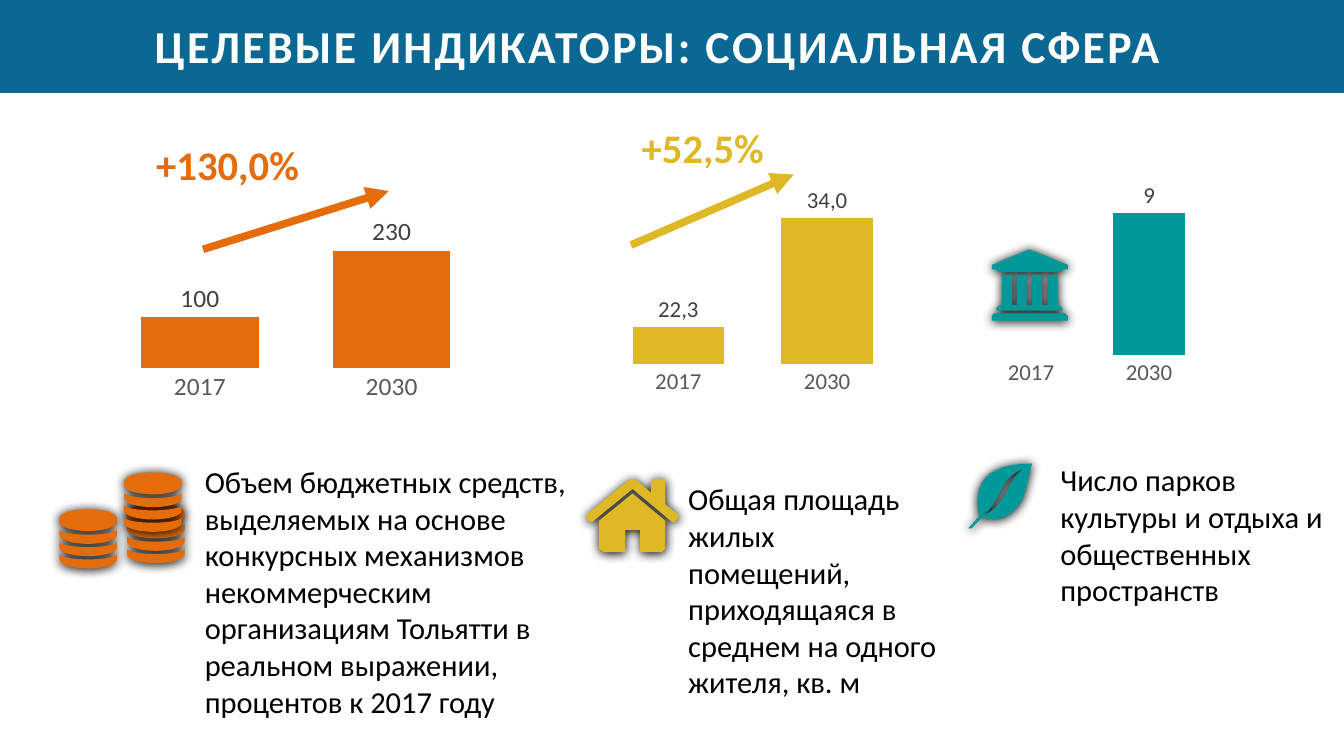
from dataclasses import dataclass
from math import cos, pi, sin

from lxml.etree import SubElement
from pptx import Presentation
from pptx.chart.data import CategoryChartData
from pptx.dml.color import RGBColor
from pptx.enum.chart import XL_CHART_TYPE as ChartType, XL_LABEL_POSITION as LabelPosition
from pptx.enum.chart import XL_TICK_MARK as TickMark
from pptx.enum.shapes import MSO_CONNECTOR as Connector, MSO_SHAPE as Shape
from pptx.enum.text import MSO_ANCHOR as Anchor, MSO_AUTO_SIZE as AutoSize, PP_ALIGN as Align
from pptx.oxml.ns import qn
from pptx.util import Cm, Pt

FONT = "Calibri"
WIDTH, HEIGHT = 37.34, 21.01
PANEL_TOP = 3.3
GRID = Cm(2.54) / 100  # one unit of the icon outlines
FINE = 10  # subdivisions of a unit, for smooth curves


@dataclass
class Indicator:
    """One panel; every box and point is in cm from the panel's corner."""
    left: float
    color: str
    chart_box: tuple
    plot: tuple
    values: tuple
    top_value: float
    label_size: int
    caption: str
    caption_box: tuple
    icons: tuple
    point_labels: tuple = ()
    growth: str = ""
    growth_box: tuple = ()
    arrow: tuple = ()


def rgb(color):
    return RGBColor.from_string(color)


def style_font(font, size, color, bold=False):
    font.name, font.size, font.bold = FONT, Pt(size), bold
    font.color.rgb = rgb(color)


def arc(bottom, depth, start, end):
    """Points of an elliptic arc across a coin; angles are in radians."""
    steps = [start + (end - start) * i / 16 for i in range(17)]
    return [(31.5 + 31.5 * cos(a), bottom + depth * sin(a)) for a in steps]


def curve(*controls):
    """Points of a cubic Bezier curve."""
    points = []
    for i in range(17):
        t = i / 16
        weights = ((1 - t) ** 3, 3 * t * (1 - t) ** 2, 3 * t * t * (1 - t), t ** 3)
        points.append(tuple(sum(w * c[k] for w, c in zip(weights, controls)) for k in (0, 1)))
    return points


def chain(start, *segments):
    """Points of joined Bezier curves."""
    points = [start]
    for segment in segments:
        points += curve(points[-1], *segment)[1:]
    return points


COINS = [arc(10, 10, pi, 2 * pi) + arc(14, 10, 0, pi)] + [
    arc(22 + 13.5 * i, 6, pi, 0) + arc(28 + 13.5 * i, 10, 0, pi) for i in range(3)]
HOUSE = [
    [(97, 47), (94, 47), (51, 11), (7, 47), (4, 47), (0, 42), (1, 39), (46, 2), (51, 0),
     (56, 2), (71, 15), (71, 2), (73, 0), (85, 0), (87, 2), (87, 28), (101, 39), (101, 42)],
    [(87, 76), (83, 80), (59, 80), (59, 56), (43, 56), (43, 80), (19, 80), (14, 76),
     (14, 46), (51, 16), (87, 46)]]
TEMPLE = [
    [(83, 17), (83, 22), (77, 22), (74, 25), (8, 25), (5, 22), (0, 22), (0, 17), (41, 0)],
    [(x, y) for column in (11, 27, 44, 61)
     for x, y in ((column, 61), (column, 28), (column + 11, 28), (column + 11, 61))]
    + [(74, 61), (77, 64), (77, 67), (5, 67), (5, 64), (8, 61)],
    [(83, 73), (83, 78), (0, 78), (0, 73), (2, 70), (80, 70)]]
LEAF = [
    chain((75, 0), [(0, 0), (17, 50), (17, 58)]) + [(5, 71), (9, 71)]
    + chain((20, 59), [(26, 60), (39, 65), (53, 53)], [(68, 42), (67, 29), (75, 0)]),
    chain((63, 7), [(70, 3), (63, 8), (63, 8)], [(56, 13), (53, 20), (49, 27)],
          [(44, 37), (37, 49), (27, 54)], [(16, 58), (21, 56), (26, 53)],
          [(30, 49), (36, 39), (40, 32)], [(45, 22), (49, 13), (63, 7)])]

INDICATORS = [
    Indicator(
        1.65, "E46C0A", (1.02, 2.72, 11.1, 5.18), (0.02, 0.11, 0.96, 0.7), (100, 230), 250, 20,
        "Объем бюджетных средств, выделяемых на основе конкурсных механизмов некоммерческим "
        "организациям Тольятти в реальном выражении, процентов к 2017 году",
        (3.79, 9.45, 10.67, 7.44),
        ((COINS, 0, 10.85), (COINS, 1.88, 10.7), (COINS, 1.8, 9.83)),
        growth="+130,0%", growth_box=(2.44, 0.46, 5.23, 1.63), arrow=(3.99, 3.63, 9.15, 2.01)),
    Indicator(
        16.28, "DEB825", (0.33, 1.88, 8.61, 5.89), (0.02, 0.06, 0.96, 0.78), (101.7, 400), 450, 18,
        "Общая площадь жилых помещений, приходящаяся в среднем на одного жителя, кв. м",
        (2.59, 9.93, 7.47, 6.4), ((HOUSE, 0, 10.01),), point_labels=("22,3", "34,0"),
        growth="+52,5%", growth_box=(1.3, 0, 5.18, 1.63), arrow=(1.25, 3.51, 5.77, 1.55)),
    Indicator(
        26.77, "009999", (0.1, 1.75, 6.83, 5.74), (0.02, 0.07, 0.96, 0.77), (None, 9), 10, 18,
        "Число парков культуры и отдыха и общественных пространств",
        (2.44, 9.4, 8.05, 4.37), ((TEMPLE, 0.79, 3.63), (LEAF, 0, 9.58))),
]


def add_header(slide, text):
    band = slide.shapes.add_shape(Shape.RECTANGLE, 0, 0, Cm(WIDTH), Cm(2.58))
    band.shadow.inherit = False
    band.fill.solid()
    band.fill.fore_color.rgb = rgb("0B6893")
    band.line.fill.background()
    slide.shapes._spTree.insert(2, band._element)  # behind the title
    title = slide.shapes.title
    title.left, title.top, title.width, title.height = Cm(2.44), Cm(0.56), Cm(31.67), Cm(1.42)
    frame = title.text_frame
    frame.margin_left = frame.margin_top = frame.margin_right = frame.margin_bottom = 0
    frame.vertical_anchor, frame.auto_size = Anchor.MIDDLE, AutoSize.NONE
    para = frame.paragraphs[0]
    para.alignment = Align.CENTER
    span = para.add_run()
    span.text = text
    style_font(span.font, 36, "FFFFFF", True)
    span.font._element.set("spc", "190")


def add_text(slide, box, text, size, color, bold=False):
    frame = slide.shapes.add_textbox(*box).text_frame
    frame.word_wrap, frame.auto_size = True, AutoSize.SHAPE_TO_FIT_TEXT
    span = frame.paragraphs[0].add_run()
    span.text = text
    style_font(span.font, size, color, bold)


def add_arrow(slide, ends, color):
    arrow = slide.shapes.add_connector(Connector.STRAIGHT, *ends)
    arrow.line.color.rgb, arrow.line.width = rgb(color), Pt(6)
    SubElement(arrow.line._get_or_add_ln(), qn("a:tailEnd"), type="triangle")
    SubElement(arrow._element.spPr, qn("a:effectLst"))


def add_icon(slide, left, top, outlines, color):
    builder = None
    for outline in outlines:
        points = [(x * FINE, y * FINE) for x, y in outline]
        if builder is None:
            builder = slide.shapes.build_freeform(*points[0], scale=GRID / FINE)
        else:
            builder.move_to(*points[0])
        builder.add_line_segments(points[1:], close=True)
    icon = builder.convert_to_shape(left, top)
    icon.fill.solid()
    icon.fill.fore_color.rgb = rgb(color)
    icon.line.fill.background()
    icon.shadow.inherit = False
    effects = icon._element.spPr.find(qn("a:effectLst"))
    shadow = SubElement(effects, qn("a:outerShdw"), blurRad=str(Pt(8.5)), dist=str(Pt(1)),
                        dir="5400000", algn="t", rotWithShape="0")
    SubElement(shadow, qn("a:srgbClr"), val="000000")


def set_plot_layout(chart, plot):
    area = chart._chartSpace.chart.plotArea
    layout = area.find(qn("c:layout"))
    if layout is None:
        layout = SubElement(area, qn("c:layout"))
        area.insert(0, layout)
    manual = SubElement(layout, qn("c:manualLayout"))
    settings = [("layoutTarget", "inner"), ("xMode", "edge"), ("yMode", "edge")]
    for name, value in settings + list(zip("xywh", plot)):
        SubElement(manual, qn("c:" + name), val=str(value))


def add_columns(slide, box, item):
    data = CategoryChartData()
    data.categories = ["2017", "2030"]
    data.add_series("Series 1", item.values)
    chart = slide.shapes.add_chart(ChartType.COLUMN_CLUSTERED, *box, data).chart
    chart.has_title = chart.has_legend = False
    style_font(chart.font, item.label_size, "000000")
    years, scale = chart.category_axis, chart.value_axis
    years.major_tick_mark = years.minor_tick_mark = TickMark.NONE
    years.format.line.fill.background()
    style_font(years.tick_labels.font, item.label_size, "595959")
    scale.visible = scale.has_major_gridlines = False
    scale.minimum_scale, scale.maximum_scale = 0, item.top_value
    plot = chart.plots[0]
    plot.gap_width, plot.overlap, plot.vary_by_categories = 63, -27, False
    series = plot.series[0]
    series.format.fill.solid()
    series.format.fill.fore_color.rgb = rgb(item.color)
    labels = series.data_labels
    labels.show_value, labels.position = True, LabelPosition.OUTSIDE_END
    style_font(labels.font, item.label_size, "404040")
    for index, text in enumerate(item.point_labels):
        label = series.points[index].data_label
        span = label.text_frame.paragraphs[0].add_run()
        span.text = text
        style_font(span.font, item.label_size, "404040")
        label.position = LabelPosition.OUTSIDE_END
    set_plot_layout(chart, item.plot)


def add_indicator(slide, item):
    def place(x, y, *size):
        return [Cm(item.left + x), Cm(PANEL_TOP + y), *map(Cm, size)]

    add_columns(slide, place(*item.chart_box), item)
    add_text(slide, place(*item.caption_box), item.caption, 24, "000000")
    if item.growth:
        add_arrow(slide, place(*item.arrow[:2]) + place(*item.arrow[2:]), item.color)
        add_text(slide, place(*item.growth_box), item.growth, 32, item.color, True)
    for outlines, x, y in item.icons:
        add_icon(slide, *place(x, y), outlines, item.color)


def main():
    deck = Presentation()
    deck.slide_width, deck.slide_height = Cm(WIDTH), Cm(HEIGHT)
    slide = deck.slides.add_slide(deck.slide_layouts[5])
    add_header(slide, "ЦЕЛЕВЫЕ ИНДИКАТОРЫ: СОЦИАЛЬНАЯ СФЕРА")
    for item in INDICATORS:
        add_indicator(slide, item)
    deck.save("out.pptx")


if __name__ == "__main__":
    main()
